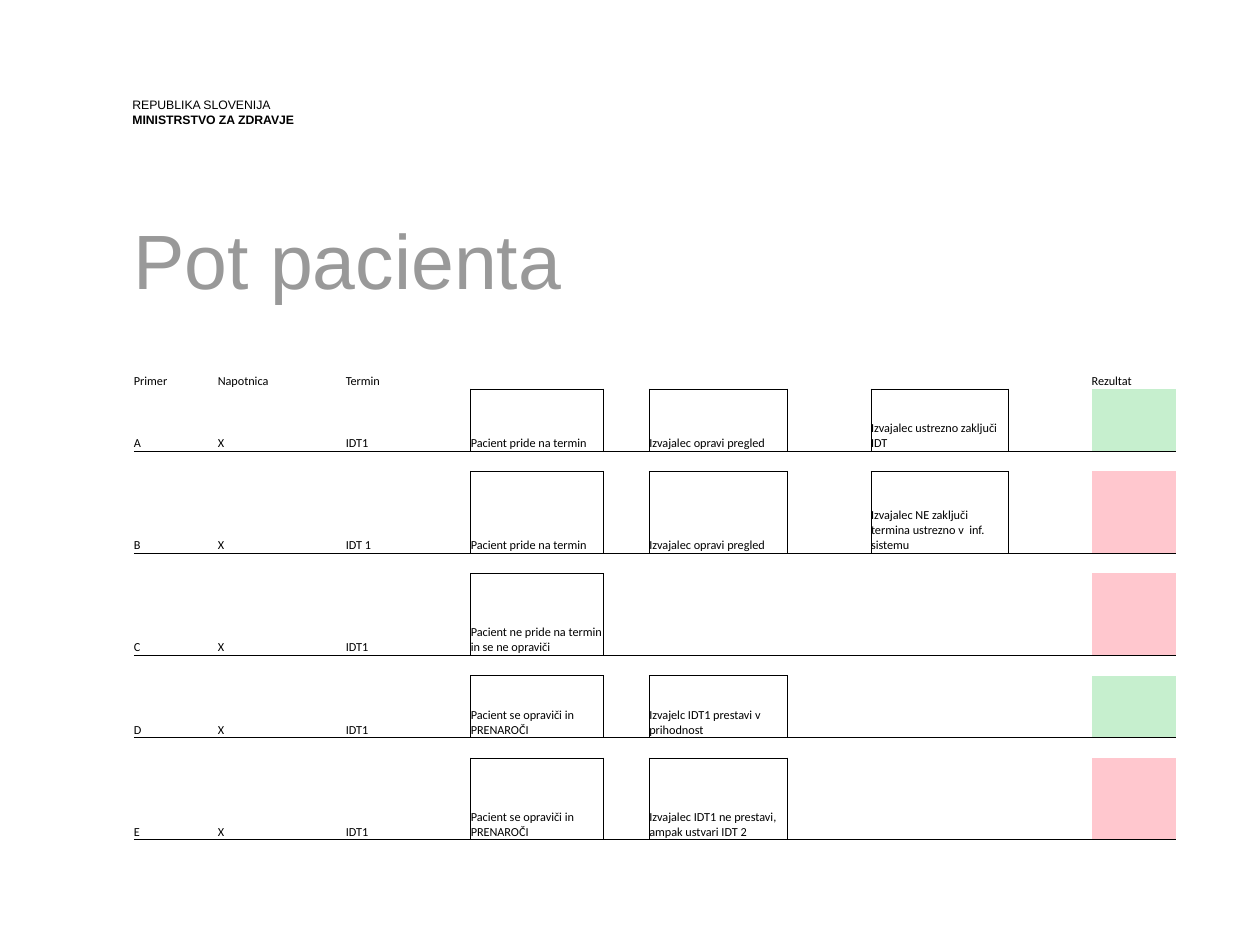
from collections import namedtuple

from lxml import etree
from pptx import Presentation
from pptx.dml.color import RGBColor
from pptx.enum.text import MSO_ANCHOR
from pptx.oxml.ns import qn
from pptx.util import Cm, Pt

BLACK = RGBColor(0x00, 0x00, 0x00)
GREY = RGBColor(0x99, 0x99, 0x99)
GREEN = RGBColor(0xC6, 0xEF, 0xCE)
PINK = RGBColor(0xFF, 0xC7, 0xCE)
BOTTOM = MSO_ANCHOR.BOTTOM

Box = namedtuple("Box", "left top width height")

HEADER_FORMAT = {"name": "Arial", "size": Pt(7), "bold": False}
HEADER_BOLD = {**HEADER_FORMAT, "bold": True}
TITLE_FORMAT = {"name": "Arial", "size": Pt(44)}
CELL_FORMAT = {"name": "Calibri", "size": Pt(7)}
NO_MARGINS = {"margin_left": 0, "margin_right": 0, "margin_top": 0, "margin_bottom": 0}

COLUMN_WIDTHS = [1.69, 1.69, 0.89, 1.69, 0.83, 2.68, 0.92, 2.78, 1.69, 2.76, 1.69, 1.69]
HEADING_HEIGHT = 0.78
GAP_HEIGHT = 0.41
HEADINGS = {0: "Primer", 1: "Napotnica", 3: "Termin", 11: "Rezultat"}
STEP_COLUMNS = [5, 7, 9]
RESULT_COLUMN = 11
ARRIVES = "Pacient pride na termin"
EXAMINES = "Izvajalec opravi pregled"
REBOOKS = "Pacient se opraviči in PRENAROČI"
CASES = [
    ("A", "IDT1", 1.25, GREEN, [ARRIVES, EXAMINES, "Izvajalec ustrezno zaključi IDT"]),
    ("B", "IDT 1", 1.65, PINK,
     [ARRIVES, EXAMINES, "Izvajalec NE zaključi termina ustrezno v  inf. sistemu"]),
    ("C", "IDT1", 1.65, PINK, ["Pacient ne pride na termin in se ne opraviči"]),
    ("D", "IDT1", 1.25, GREEN, [REBOOKS, "Izvajelc IDT1 prestavi v prihodnost"]),
    ("E", "IDT1", 1.65, PINK, [REBOOKS, "Izvajalec IDT1 ne prestavi, ampak ustvari IDT 2"]),
]


def apply_format(target, values):
    for name, value in values.items():
        setattr(target, name, value)


def add_span(para, text, values, color):
    span = para.add_run()
    span.text = text
    apply_format(span.font, values)
    span.font.color.rgb = color


def add_text_frame(page, box, wrap):
    frame = page.shapes.add_textbox(*map(Cm, box)).text_frame
    apply_format(frame, {**NO_MARGINS, "word_wrap": wrap})
    return frame


def add_header(page, box):
    frame = add_text_frame(page, box, True)
    lines = [("REPUBLIKA SLOVENIJA", HEADER_FORMAT), ("MINISTRSTVO ZA ZDRAVJE", HEADER_BOLD)]
    for index, (text, values) in enumerate(lines):
        para = frame.add_paragraph() if index else frame.paragraphs[0]
        para.line_spacing = Pt(8.4)
        add_span(para, text, values, BLACK)


def add_title(page, box):
    frame = add_text_frame(page, box, False)
    add_span(frame.paragraphs[0], "Pot pacienta", TITLE_FORMAT, GREY)


def set_border(cell, side, visible):
    properties = cell._tc.get_or_add_tcPr()
    line = etree.SubElement(properties, qn(f"a:ln{side}"), w=str(Pt(0.5)))
    if visible:
        fill = etree.SubElement(line, qn("a:solidFill"))
        etree.SubElement(fill, qn("a:srgbClr"), val=str(BLACK))
    else:
        etree.SubElement(line, qn("a:noFill"))


def fill_cell(cell, text, borders, color):
    apply_format(cell, {**NO_MARGINS, "vertical_anchor": BOTTOM})
    para = cell.text_frame.paragraphs[0]
    if text:
        add_span(para, text, CELL_FORMAT, BLACK)
    else:
        etree.SubElement(para._p, qn("a:endParaRPr"), sz="700")
    for side, visible in borders.items():
        set_border(cell, side, visible)
    if color is None:
        cell.fill.background()
    else:
        cell.fill.solid()
        cell.fill.fore_color.rgb = color


def add_path_table(page, box):
    heights, texts, colors, steps = [HEADING_HEIGHT], [HEADINGS], {}, set()
    for index, (name, appointment, height, color, actions) in enumerate(CASES):
        if index:
            heights.append(GAP_HEIGHT)
            texts.append({})
        row = len(heights)
        actions_by_column = dict(zip(STEP_COLUMNS, actions))
        heights.append(height)
        texts.append({0: name, 1: "X", 3: appointment, **actions_by_column})
        colors[row] = color
        steps.update((row, column) for column in actions_by_column)

    frame = page.shapes.add_table(len(heights), len(COLUMN_WIDTHS), *map(Cm, box))
    table = frame.table
    apply_format(table, {"first_row": False, "horz_banding": False})
    for column, width in zip(table.columns, COLUMN_WIDTHS):
        column.width = Cm(width)
    for row, height in enumerate(heights):
        table.rows[row].height = Cm(height)
        for column in range(len(COLUMN_WIDTHS)):
            is_step = (row, column) in steps
            borders = {
                "L": is_step or (row, column - 1) in steps,
                "R": is_step or (row, column + 1) in steps,
                "T": is_step or row - 1 in colors,
                "B": row in colors or (row + 1, column) in steps,
            }
            color = colors.get(row) if column == RESULT_COLUMN else None
            fill_cell(table.cell(row, column), texts[row].get(column), borders, color)


def main():
    deck = Presentation()
    deck.slide_width, deck.slide_height = Cm(25.4), Cm(19.05)
    page = deck.slides.add_slide(deck.slide_layouts[6])
    add_header(page, Box(2.67, 1.96, 3.35, 0.56))
    add_title(page, Box(2.69, 4.29, 8.71, 1.88))
    add_path_table(page, Box(2.7, 7.06, sum(COLUMN_WIDTHS), 9.9))
    deck.save("out.pptx")


if __name__ == "__main__":
    main()
